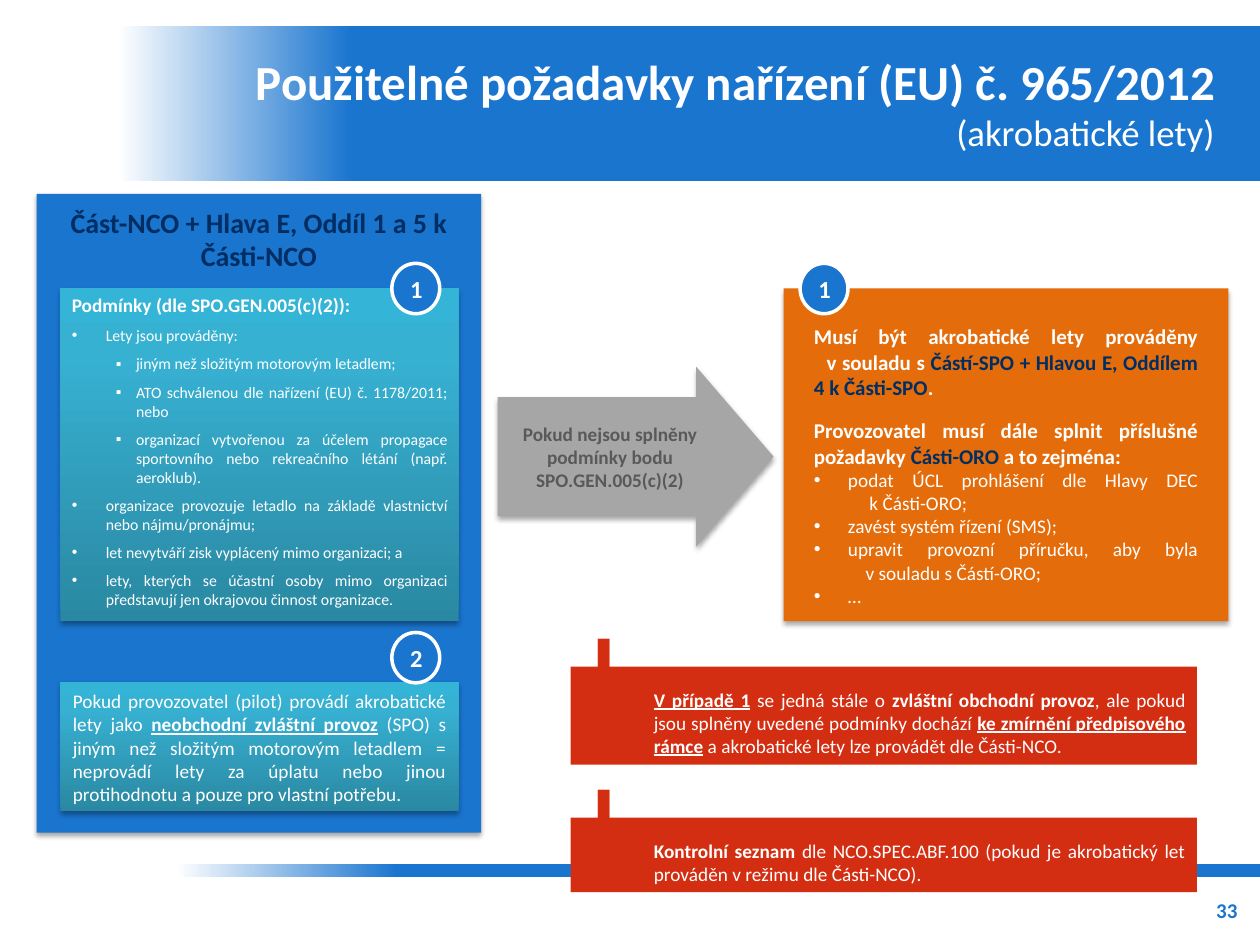
"""Build the slide on the requirements of regulation 965/2012 for aerobatic flights."""
from copy import deepcopy

from lxml import etree
from pptx import Presentation
from pptx import util as u
from pptx.dml.color import RGBColor
from pptx.enum import shapes, text
from pptx.oxml import parse_xml
from pptx.oxml.ns import nsdecls, qn

WHITE = RGBColor(0xFF, 0xFF, 0xFF)
BLUE = RGBColor(0x1A, 0x75, 0xCF)
NAVY = RGBColor(0x00, 0x2E, 0x63)
ORANGE = RGBColor(0xE4, 0x6C, 0x0A)
RED = RGBColor(0xD4, 0x2E, 0x12)
GREY = RGBColor(0xA6, 0xA6, 0xA6)
DARK_GREY = RGBColor(0x59, 0x59, 0x59)
FADE = [(0.02, WHITE), (0.22, BLUE)]
TEAL = [(0, RGBColor(0x2A, 0x88, 0xA2)), (0.8, RGBColor(0x37, 0xB1, 0xD2)),
        (1, RGBColor(0x34, 0xB4, 0xD6))]
SHADOW = (f'<a:effectLst {nsdecls("a")}><a:outerShdw blurRad="39370" dist="22860" '
          'dir="5400000" rotWithShape="0"><a:srgbClr val="000000"><a:alpha val="35000"/>'
          '</a:srgbClr></a:outerShdw></a:effectLst>')
KIND = shapes.MSO_SHAPE
ALIGN = text.PP_ALIGN
ANCHOR = text.MSO_ANCHOR

deck = Presentation()
deck.slide_width, deck.slide_height = u.Inches(10), u.Inches(7.5)
COL, ROW = deck.slide_width / 100, deck.slide_height / 100
slide = deck.slides.add_slide(deck.slide_layouts[5])


def block(kind, place, fill, angle=0, shadow=False):
    left, top, width, height = place
    part = slide.shapes.add_shape(kind, int(left * COL), int(top * ROW),
                                  int(width * COL), int(height * ROW))
    part.line.fill.background()
    part.shadow.inherit = False
    if shadow:
        properties = part.element.spPr
        properties.replace(properties.find(qn("a:effectLst")), parse_xml(SHADOW))
    if isinstance(fill, RGBColor):
        part.fill.solid()
        part.fill.fore_color.rgb = fill
        return part
    part.fill.gradient()
    part.fill.gradient_angle = angle
    stop_list = part.element.spPr.find(qn("a:gradFill")).find(qn("a:gsLst"))
    while len(stop_list) < len(fill):
        stop_list.append(deepcopy(stop_list[-1]))
    for stop, (position, color) in zip(part.fill.gradient_stops, fill):
        stop.position, stop.color.rgb = position, color
    return part


def write(part, paragraphs, align, anchor, size, color=WHITE, bold=False,
          insets=(0.09, 0.04, 0.09, 0.04), wrap=True):
    frame = part.text_frame
    sides = ("margin_left", "margin_top", "margin_right", "margin_bottom")
    layout = dict(zip(sides, map(u.Inches, insets)), word_wrap=wrap, vertical_anchor=anchor)
    for name, value in layout.items():
        setattr(frame, name, value)
    for index, (look, runs) in enumerate(paragraphs):
        paragraph = frame.add_paragraph() if index else frame.paragraphs[0]
        paragraph.alignment = align
        if index and "before" in look:
            paragraph.space_before = u.Pt(look["before"])
        properties = paragraph._p.get_or_add_pPr()
        if "bullet" in look:
            margin, hanging = look["indent"]
            properties.set("marL", str(u.Inches(margin)))
            properties.set("indent", str(-u.Inches(hanging)))
            etree.SubElement(properties, qn("a:buFont"), typeface="Arial")
            etree.SubElement(properties, qn("a:buChar"), char=look["bullet"])
        if "tab" in look:
            tabs = etree.SubElement(properties, qn("a:tabLst"))
            etree.SubElement(tabs, qn("a:tab"), pos=str(u.Inches(look["tab"])), algn="l")
        for words, change in runs:
            style = {"name": "Calibri", "size": size, "bold": bold, "color": color,
                     **look.get("font", {}), **change}
            run_color = style.pop("color")
            style["size"] = u.Pt(style["size"])
            for row, piece in enumerate(words.split("\v")):
                if row:
                    paragraph.add_line_break()
                    paragraph._p[-1].append(deepcopy(run._r.rPr))
                if piece:
                    run = paragraph.add_run()
                    run.text = piece
                    for name, value in style.items():
                        setattr(run.font, name, value)
                    run.font.color.rgb = run_color


title = slide.shapes.title
for band in [(7.5, 2.8, 92.5, 16.4), (12.2, 91.47, 87.8, 1.33)]:
    title.element.addprevious(block(KIND.RECTANGLE, band, FADE).element)

title_place = {"left": 7.5 * COL, "top": 2.53 * ROW, "width": 89.9 * COL, "height": 16.67 * ROW}
for name, value in title_place.items():
    setattr(title, name, int(value))
write(title, [({}, [("Použitelné požadavky nařízení (EU) č. 965/2012\v", {"bold": True}),
                    ("(akrobatické lety)", {"size": 21})])],
      ALIGN.RIGHT, ANCHOR.MIDDLE, 28, insets=(0.1, 0.05, 0.1, 0.05))

page_number = slide.shapes.add_textbox(int(75.9 * COL), int(93.6 * ROW),
                                       int(23.3 * COL), int(5.33 * ROW))
write(page_number, [({}, [("33", {})])], ALIGN.RIGHT, ANCHOR.MIDDLE, 12, BLUE, True,
      (0.1, 0.05, 0.1, 0.05))

nco_panel = block(KIND.RECTANGLE, (2.9, 20.53, 35.3, 67.6), BLUE, shadow=True)
write(nco_panel, [({}, [("Část-NCO + Hlava E, Oddíl 1 a 5 k Části-NCO", {})])],
      ALIGN.CENTER, ANCHOR.TOP, 16, NAVY, True, (0.24, 0.09, 0.24, 0.04))

DUTY = {"bullet": "•", "indent": (0.27, 0.27), "font": {"size": 11, "bold": False}}
spo_panel = block(KIND.RECTANGLE, (62.2, 30.53, 35.3, 35.2), ORANGE, shadow=True)
write(spo_panel, [
    ({"tab": 0.1}, [("Musí být akrobatické lety prováděny\v\tv souladu s ", {}),
                    ("Částí-SPO + Hlavou E, Oddílem 4 k Části-SPO", {"color": NAVY}),
                    (".", {})]),
    ({"before": 10.5}, [("Provozovatel musí dále splnit příslušné požadavky ", {}),
                        ("Části-ORO", {"color": NAVY}), (" a to zejména:", {})]),
    ({**DUTY, "tab": 0.44}, [("podat ÚCL prohlášení dle Hlavy DEC\v\tk Části-ORO;", {})]),
    (DUTY, [("zavést systém řízení (SMS);", {})]),
    ({**DUTY, "tab": 0.41}, [("upravit provozní příručku, aby byla\v\tv souladu s Částí-ORO;", {})]),
    (DUTY, [("…", {})]),
], ALIGN.JUSTIFY, ANCHOR.MIDDLE, 12, bold=True, insets=(0.24, 0.21, 0.24, 0.04))

otherwise = block(KIND.RIGHT_ARROW, (39.5, 38.8, 21.9, 19.07), GREY, shadow=True)
otherwise.adjustments[0], otherwise.adjustments[1] = 0.66, 0.43
write(otherwise, [({}, [("Pokud nejsou splněny podmínky bodu SPO.GEN.005(c)(2)", {})])],
      ALIGN.CENTER, ANCHOR.MIDDLE, 11, DARK_GREY, True)

ITEM = {"before": 5.3, "bullet": "•", "indent": (0.27, 0.27)}
SUBITEM = {"before": 5.3, "bullet": "▪", "indent": (0.51, 0.16)}
conditions = block(KIND.RECTANGLE, (4.8, 30.53, 31.6, 35.2), TEAL, 90, True)
write(conditions, [
    ({}, [("Podmínky (dle SPO.GEN.005(c)(2)):", {"size": 11, "bold": True})]),
    (ITEM, [("Lety jsou prováděny:", {})]),
    (SUBITEM, [("jiným než složitým motorovým letadlem;", {})]),
    (SUBITEM, [("ATO schválenou dle nařízení (EU) č. 1178/2011; nebo", {})]),
    (SUBITEM, [("organizací vytvořenou za účelem propagace sportovního nebo "
                "rekreačního létání (např. aeroklub).", {})]),
    (ITEM, [("organizace provozuje letadlo na základě vlastnictví nebo nájmu/pronájmu;", {})]),
    (ITEM, [("let nevytváří zisk vyplácený mimo organizaci; a", {})]),
    (ITEM, [("lety, kterých se účastní osoby mimo organizaci představují jen "
             "okrajovou činnost organizace.", {})]),
], ALIGN.JUSTIFY, ANCHOR.TOP, 9)

STRONG = {"bold": True}
STRESSED = {"bold": True, "underline": True}
non_commercial = block(KIND.RECTANGLE, (4.8, 72.13, 31.6, 13.73), TEAL, 90, True)
write(non_commercial, [({}, [
    ("Pokud provozovatel (pilot) provádí akrobatické lety jako ", {}),
    ("neobchodní zvláštní provoz", STRESSED),
    (" (SPO) s jiným než složitým motorovým letadlem = neprovádí lety za úplatu nebo "
     "jinou protihodnotu a pouze pro vlastní potřebu.", {}),
])], ALIGN.JUSTIFY, ANCHOR.BOTTOM, 11, insets=(0.1, 0.05, 0.1, 0.05))

for number, left, top in [("1", 31.1, 27.87), ("2", 31.1, 66.93), ("1", 63.5, 27.87)]:
    badge = block(KIND.OVAL, (left, top, 3.8, 5.33), BLUE)
    badge.line.color.rgb, badge.line.width = WHITE, u.Pt(2)
    write(badge, [({}, [(number, {})])], ALIGN.CENTER, ANCHOR.MIDDLE, 14, bold=True)

notices = [
    (70.53, 10.4, [("V případě 1", STRESSED), (" se jedná stále o ", {}),
                   ("zvláštní obchodní provoz", STRONG),
                   (", ale pokud jsou splněny uvedené podmínky dochází ", {}),
                   ("ke zmírnění předpisového rámce", STRESSED),
                   (" a akrobatické lety lze provádět dle Části-NCO.", {})]),
    (86.53, 7.87, [("Kontrolní seznam", STRONG),
                   (" dle NCO.SPEC.ABF.100 (pokud je akrobatický let prováděn v režimu "
                    "dle Části-NCO).", {})]),
]
for top, height, runs in notices:
    notice = block(KIND.RECTANGLE, (45.3, top, 49.7, height), RED)
    write(notice, [({}, runs)], ALIGN.JUSTIFY, ANCHOR.TOP, 11, insets=(0.66, 0.17, 0.09, 0.04))
    warning = slide.shapes.add_textbox(int(45.7 * COL), int((top - 6.8) * ROW),
                                       int(4.4 * COL), int(14.13 * ROW))
    write(warning, [({}, [("!", {})])], ALIGN.LEFT, ANCHOR.TOP, 58, RED, True, wrap=False)
    warning.text_frame.paragraphs[0].runs[0]._r.rPr.insert(0, parse_xml(
        f'<a:ln {nsdecls("a")} w="28575"><a:solidFill><a:srgbClr val="{WHITE}"/>'
        '</a:solidFill></a:ln>'))

deck.save("out.pptx")
